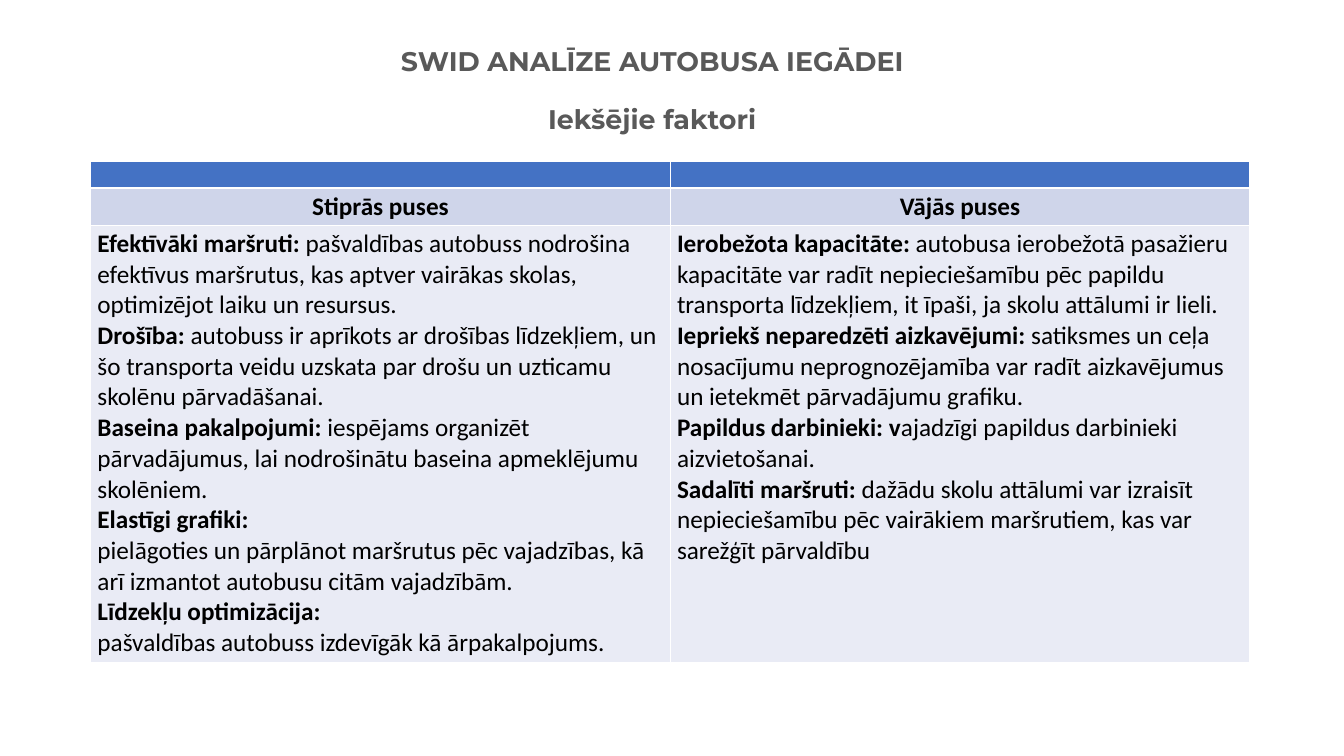
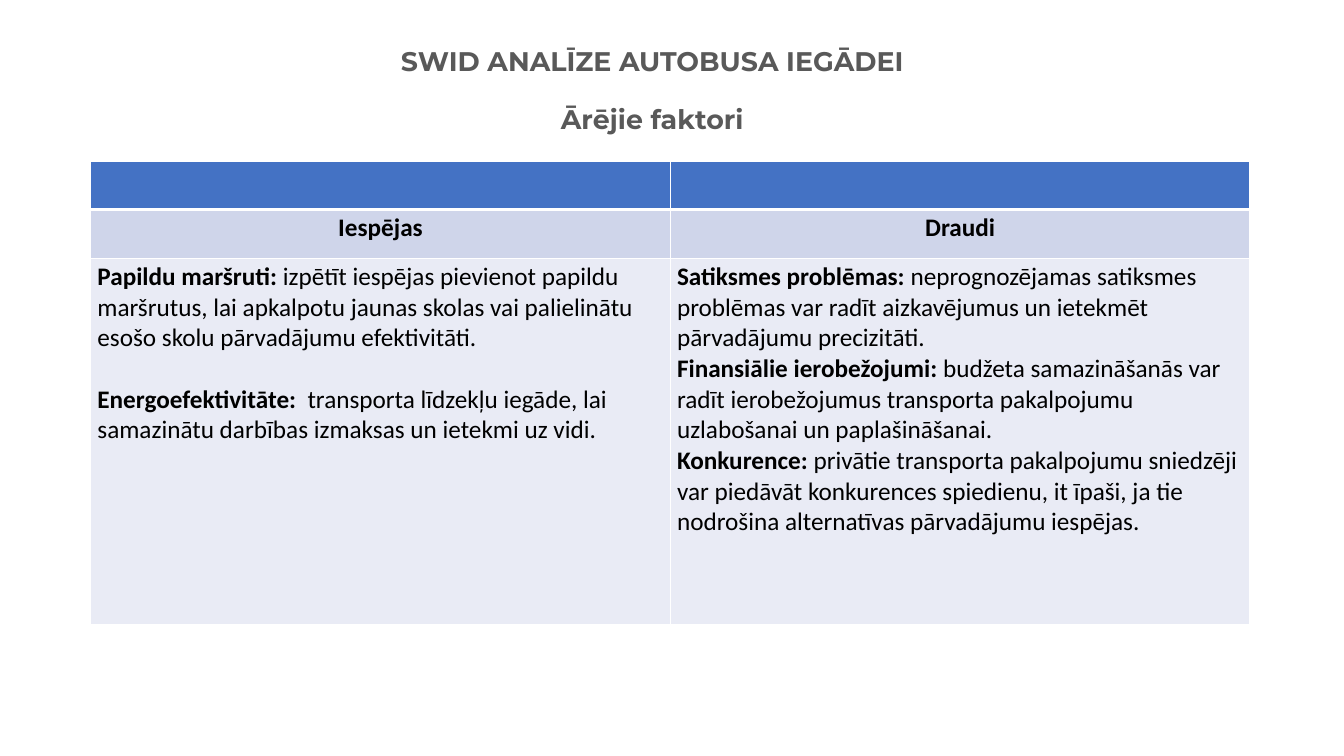
from lxml import etree
from pptx import Presentation
from pptx import util as u
from pptx.dml.color import RGBColor
from pptx.enum import text
from pptx.oxml import ns

# Shared style
PX = 9144  # 100 px to the inch
WHITE = RGBColor(0xFF, 0xFF, 0xFF)
BLACK = RGBColor(0x00, 0x00, 0x00)
GREY = RGBColor(0x59, 0x59, 0x59)
BLUE = RGBColor(0x44, 0x72, 0xC4)
BAND = RGBColor(0xCF, 0xD5, 0xEA)
PALE = RGBColor(0xE9, 0xEB, 0xF5)
TITLE_FONT, BODY_FONT = "Montserrat", "Calibri"
TITLE_SIZE, BODY_SIZE = 28.8, 27
TITLE_GAP = 31.5
BODY_GAP = 33
TITLE = "SWID ANALĪZE AUTOBUSA IEGĀDEI"

# Each factor is a bold lead and plain text
STRENGTHS = [
    ("Efektīvāki maršruti:", " pašvaldības autobuss nodrošina efektīvus maršrutus, "
     "kas aptver vairākas skolas, optimizējot laiku un resursus."),
    ("Drošība:", " autobuss ir aprīkots ar drošības līdzekļiem, un šo transporta "
     "veidu uzskata par drošu un uzticamu skolēnu pārvadāšanai."),
    ("Baseina pakalpojumi:", " iespējams organizēt pārvadājumus, lai nodrošinātu "
     "baseina apmeklējumu skolēniem."),
    ("Elastīgi grafiki:", ""),
    ("", "pielāgoties un pārplānot maršrutus pēc vajadzības, kā arī izmantot "
     "autobusu citām vajadzībām."),
    ("Līdzekļu optimizācija:", ""),
    ("", "pašvaldības autobuss izdevīgāk kā ārpakalpojums."),
]
WEAKNESSES = [
    ("Ierobežota kapacitāte:", " autobusa ierobežotā pasažieru kapacitāte var radīt "
     "nepieciešamību pēc papildu transporta līdzekļiem, it īpaši, ja skolu attālumi "
     "ir lieli."),
    ("Iepriekš neparedzēti aizkavējumi:", " satiksmes un ceļa nosacījumu "
     "neprognozējamība var radīt aizkavējumus un ietekmēt pārvadājumu grafiku."),
    ("Papildus darbinieki: v", "ajadzīgi papildus darbinieki aizvietošanai."),
    ("Sadalīti maršruti:", " dažādu skolu attālumi var izraisīt nepieciešamību pēc "
     "vairākiem maršrutiem, kas var sarežģīt pārvaldību"),
]
OPPORTUNITIES = [
    ("Papildu maršruti:", " izpētīt iespējas pievienot papildu maršrutus, lai "
     "apkalpotu jaunas skolas vai palielinātu esošo skolu pārvadājumu efektivitāti."),
    ("Energoefektivitāte: ", " transporta līdzekļu iegāde, lai samazinātu darbības "
     "izmaksas un ietekmi uz vidi."),
]
THREATS = [
    ("Satiksmes problēmas:", " neprognozējamas satiksmes problēmas var radīt "
     "aizkavējumus un ietekmēt pārvadājumu precizitāti."),
    ("Finansiālie ierobežojumi:", " budžeta samazināšanās var radīt ierobežojumus "
     "transporta pakalpojumu uzlabošanai un paplašināšanai."),
    ("Konkurence:", " privātie transporta pakalpojumu sniedzēji var piedāvāt "
     "konkurences spiedienu, it īpaši, ja tie nodrošina alternatīvas pārvadājumu "
     "iespējas."),
]


class SwotDeck:
    def __init__(self):
        self.deck = Presentation()
        self.deck.slide_width, self.deck.slide_height = 2000 * PX, 1125 * PX
        self.page = None

    def add_page(self):
        self.page = self.deck.slides.add_slide(self.deck.slide_layouts[6])
        fill = self.page.background.fill
        fill.solid()
        fill.fore_color.rgb = WHITE

    def add_span(self, para, words, font, size, color, bold):
        span = para.add_run()
        span.text = words
        span.font.name, span.font.size = font, u.Pt(size)
        span.font.color.rgb, span.font.bold = color, bold

    def add_title(self, subtitle):
        box = self.page.shapes.add_textbox(108 * PX, 60 * PX, 1725 * PX, 153 * PX)
        frame = box.text_frame
        frame.word_wrap = True
        frame.vertical_anchor = text.MSO_ANCHOR.MIDDLE
        for para, words in ((frame.paragraphs[0], TITLE), (frame.add_paragraph(), subtitle)):
            para.alignment = text.PP_ALIGN.CENTER
            para.line_spacing = 0.9
            self.add_span(para, words, TITLE_FONT, TITLE_SIZE, GREY, True)
        frame.paragraphs[0].space_after = u.Pt(TITLE_GAP)

    def style_cell(self, cell, color, top=1, bottom=1):
        props = cell._tc.get_or_add_tcPr()
        for side, width in (("L", 1), ("R", 1), ("T", top), ("B", bottom)):
            line = etree.SubElement(props, ns.qn(f"a:ln{side}"), w=str(u.Pt(width)))
            fill = etree.SubElement(line, ns.qn("a:solidFill"))
            etree.SubElement(fill, ns.qn("a:srgbClr"), val=str(WHITE))
        cell.fill.solid()
        cell.fill.fore_color.rgb = color

    def add_factors(self, cell, factors, gap):
        for index, (lead, rest) in enumerate(factors):
            frame = cell.text_frame
            para = frame.add_paragraph() if index else frame.paragraphs[0]
            if index and gap:
                para.space_before = u.Pt(gap)
            for words, bold in ((lead, True), (rest, False)):
                if words:
                    self.add_span(para, words, BODY_FONT, BODY_SIZE, BLACK, bold)

    def add_table(self, heights, columns):
        frame = self.page.shapes.add_table(
            len(heights), len(columns), 135 * PX, 240 * PX, 1725 * PX, sum(heights) * PX)
        table = frame.table
        table.first_row = table.horz_banding = False
        for row, height in zip(table.rows, heights):
            row.height = height * PX
        for index, (heading, factors, gap) in enumerate(columns):
            top, head, body = (table.cell(row, index) for row in range(3))
            self.style_cell(top, BLUE, bottom=3)
            self.style_cell(head, BAND, top=3)
            self.style_cell(body, PALE)
            para = head.text_frame.paragraphs[0]
            para.alignment = text.PP_ALIGN.CENTER
            self.add_span(para, heading, BODY_FONT, BODY_SIZE, BLACK, True)
            self.add_factors(body, factors, gap)


def main():
    swot = SwotDeck()

    # Internal factors
    swot.add_page()
    swot.add_title("Iekšējie faktori")
    swot.add_table([40, 55, 650], [
        ("Stiprās puses", STRENGTHS, 0), ("Vājās puses", WEAKNESSES, 0)])

    # External factors
    swot.add_page()
    swot.add_title("Ārējie faktori")
    swot.add_table([72, 72, 545], [
        ("Iespējas", OPPORTUNITIES, BODY_GAP), ("Draudi", THREATS, 0)])

    swot.deck.save("out.pptx")


if __name__ == "__main__":
    main()
